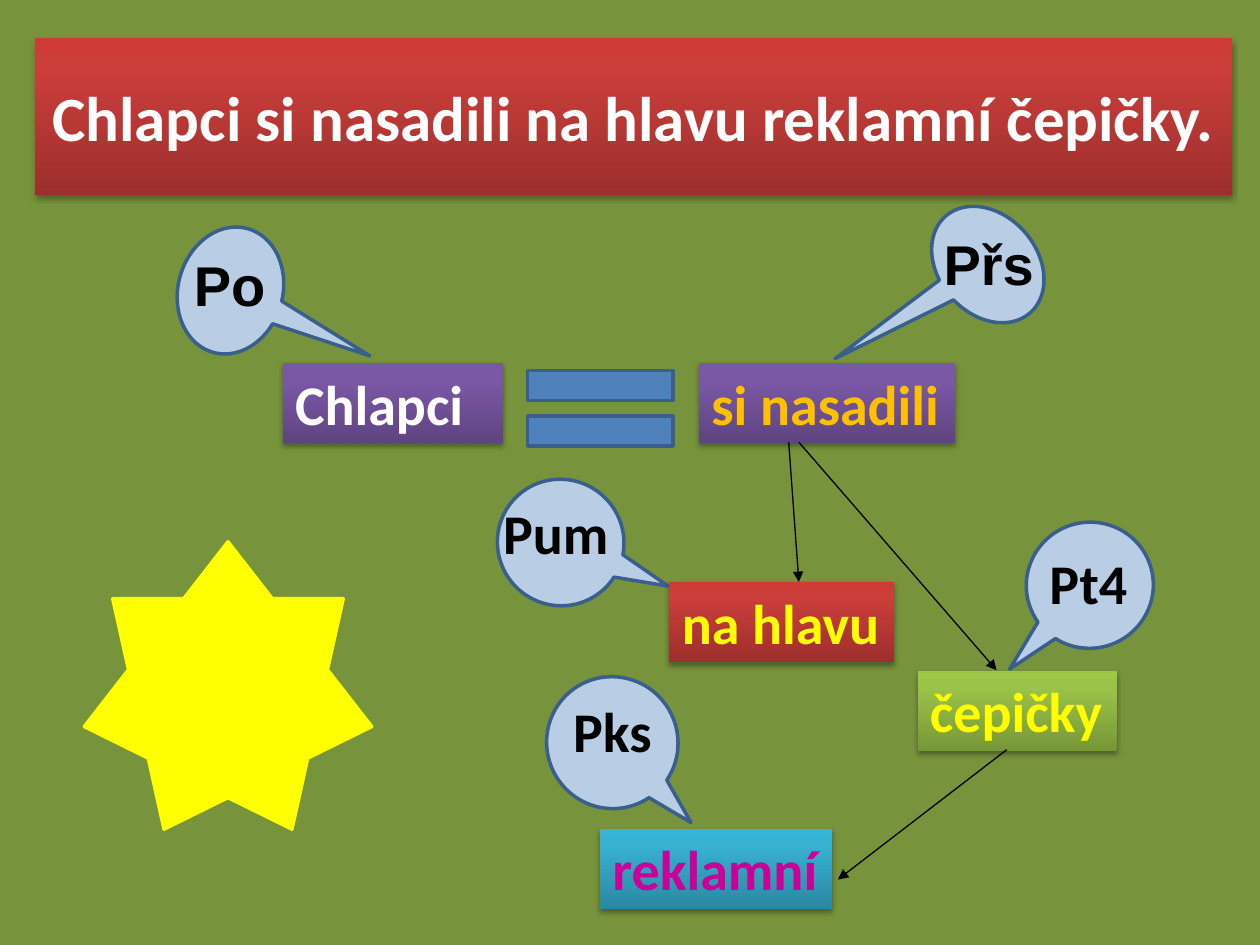
from copy import deepcopy

from lxml import etree
from pptx import Presentation
from pptx.dml.color import RGBColor
from pptx.enum.shapes import MSO_CONNECTOR, MSO_SHAPE
from pptx.enum.text import MSO_ANCHOR, PP_ALIGN
from pptx.oxml.ns import qn
from pptx.util import Pt

RECT, EQUAL, STAR = MSO_SHAPE.RECTANGLE, MSO_SHAPE.MATH_EQUAL, MSO_SHAPE.STAR_7_POINT
BUBBLE = MSO_SHAPE.OVAL_CALLOUT
STRAIGHT = MSO_CONNECTOR.STRAIGHT
LEFT, CENTER = PP_ALIGN.LEFT, PP_ALIGN.CENTER
TOP, MIDDLE = MSO_ANCHOR.TOP, MSO_ANCHOR.MIDDLE

HEX = {
    "grass": "77933C", "white": "FFFFFF", "black": "000000", "yellow": "FFFF00",
    "gold": "FFC000", "pink": "CC0099", "sky": "B9CDE5", "blue": "4F81BD",
    "navy": "3A5F8C",
}
# Gradient colours from bottom to top
SHADES = {
    "red": ("9C2F2D", "CB3E3A", "CE3B37"),
    "purple": ("5F4480", "7B58A6", "7C57A8"),
    "teal": ("2A88A2", "37B1D2", "34B4D6"),
    "green": ("779737", "9BC348", "9DC746"),
}
STOPS = (0, 0.8, 1)
ROW = 46  # height of a one-line label

TITLE = ("Chlapci si nasadili na hlavu reklamní čepičky.", (20, 21.6, 684, 90))

# text, left, top, width, shade, text colour
WORDS = [
    ("Chlapci", 161.5, 207.4, 126, "purple", "white"),
    ("si nasadili", 399.5, 207.4, 146.2, "purple", "gold"),
    ("reklamní", 342.8, 473.5, 132.8, "teal", "pink"),
    ("na hlavu", 382.5, 332.6, 128.2, "red", "yellow"),
    ("čepičky", 524.3, 383.2, 113.8, "green", "yellow"),
]

# box, turn, mirrored, pointer; then label, left, top, width, font
CALLOUTS = [
    ((95, 136.1, 73.4, 59.8), 285.5, False, (-0.2, 1.45),
     "Po", 103.7, 139.7, 56.2, "Arial"),
    ((527.8, 123.1, 73.4, 56.2), 48.9, False, (-0.23, 1.8),
     "Přs", 532.1, 127.4, 67, "Arial"),
    ((284.4, 273.6, 72, 72.7), 135.1, True, (0.36, -0.84),
     "Pum", 280.4, 281.5, 75.6, "Calibri"),
    ((312.5, 386.6, 74.9, 75.6), 326.9, False, (0.17, 0.83),
     "Pks", 320.4, 394.6, 59.8, "Calibri"),
    ((586.8, 298.1, 72, 72.7), 246.7, True, (0.36, -0.84),
     "Pt4", 592.6, 309.6, 59.8, "Calibri"),
]

# start x, start y, end x, end y
ARROWS = [
    (450.7, 252.7, 456.5, 332.6),
    (456.5, 252.7, 569.5, 383),
    (575.3, 428.4, 478.8, 502.6),
]


def rgb(name):
    return RGBColor.from_string(HEX[name])


def node(parent, tag, **attrs):
    return etree.SubElement(parent, qn(tag), attrs)


def put(obj, **values):
    for key, value in values.items():
        setattr(obj, key, value)


def shape(slide, kind, box, fill=None, line=None, points=()):
    item = slide.shapes.add_shape(kind, *map(Pt, box))
    item.shadow.inherit = False
    for i, value in enumerate(points):
        item.adjustments[i] = value
    if fill:
        item.fill.solid()
        item.fill.fore_color.rgb = rgb(fill)
    if line:
        item.line.color.rgb = rgb(line)
        item.line.width = Pt(2)
    else:
        item.line.fill.background()
    return item


def write(item, text, font, size, color, align=LEFT, anchor=TOP):
    frame = item.text_frame
    put(frame, word_wrap=True, vertical_anchor=anchor, margin_right=0 if align == LEFT else Pt(7.2))
    par = frame.paragraphs[0]
    par.alignment = align
    run = par.add_run()
    run.text = text
    put(run.font, name=font, size=Pt(size), bold=True)
    run.font.color.rgb = rgb(color)


def panel(slide, box, shade):
    """Rectangle with a three-stop gradient and a soft shadow below."""
    item = shape(slide, RECT, box)
    item.fill.gradient()
    item.fill.gradient_angle = 90
    props = item._element.spPr
    stops = props.find(".//" + qn("a:gsLst"))
    stops.append(deepcopy(stops[-1]))
    for stop, place, color in zip(item.fill.gradient_stops, STOPS, SHADES[shade]):
        stop.position = place
        stop.color.rgb = RGBColor.from_string(color)
    glow = node(props.find(qn("a:effectLst")), "a:outerShdw", blurRad=str(Pt(3.1)),
                dist=str(Pt(1.8)), dir="5400000", rotWithShape="0")
    node(node(glow, "a:srgbClr", val=HEX["black"]), "a:alpha", val="35000")
    return item


def callout(slide, box, turn, flip, tip, text, left, top, width, font):
    item = shape(slide, BUBBLE, box, "sky", "navy", tip)
    item.rotation = turn
    if flip:
        item._element.spPr.find(qn("a:xfrm")).set("flipH", "1")
    label = slide.shapes.add_textbox(*map(Pt, (left, top, width, ROW)))
    write(label, text, font, 32, "black")


def arrow(slide, ends):
    item = slide.shapes.add_connector(STRAIGHT, *map(Pt, ends))
    item.line.color.rgb = rgb("black")
    item.line.width = Pt(0.75)
    node(item.line._get_or_add_ln(), "a:tailEnd", type="triangle")
    node(item._element.spPr, "a:effectLst")


def main():
    deck = Presentation()
    put(deck, slide_width=Pt(720), slide_height=Pt(540))
    slide = deck.slides.add_slide(deck.slide_layouts[6])
    back = slide.background.fill
    back.solid()
    back.fore_color.rgb = rgb("grass")

    text, box = TITLE
    write(panel(slide, box, "red"), text, "Calibri", 36, "white", CENTER, MIDDLE)
    for spec in CALLOUTS:
        callout(slide, *spec)
    for text, left, top, width, shade, color in WORDS:
        item = panel(slide, (left, top, width, ROW), shade)
        write(item, text, "Calibri", 32, color)
    shape(slide, EQUAL, (286.6, 196.6, 113, 73.4), "blue", "navy", (0.235, 0.118))
    for ends in ARROWS:
        arrow(slide, ends)
    shape(slide, STAR, (48.2, 309.6, 164.2, 164.2), "yellow", "yellow")
    deck.save("out.pptx")


if __name__ == "__main__":
    main()
